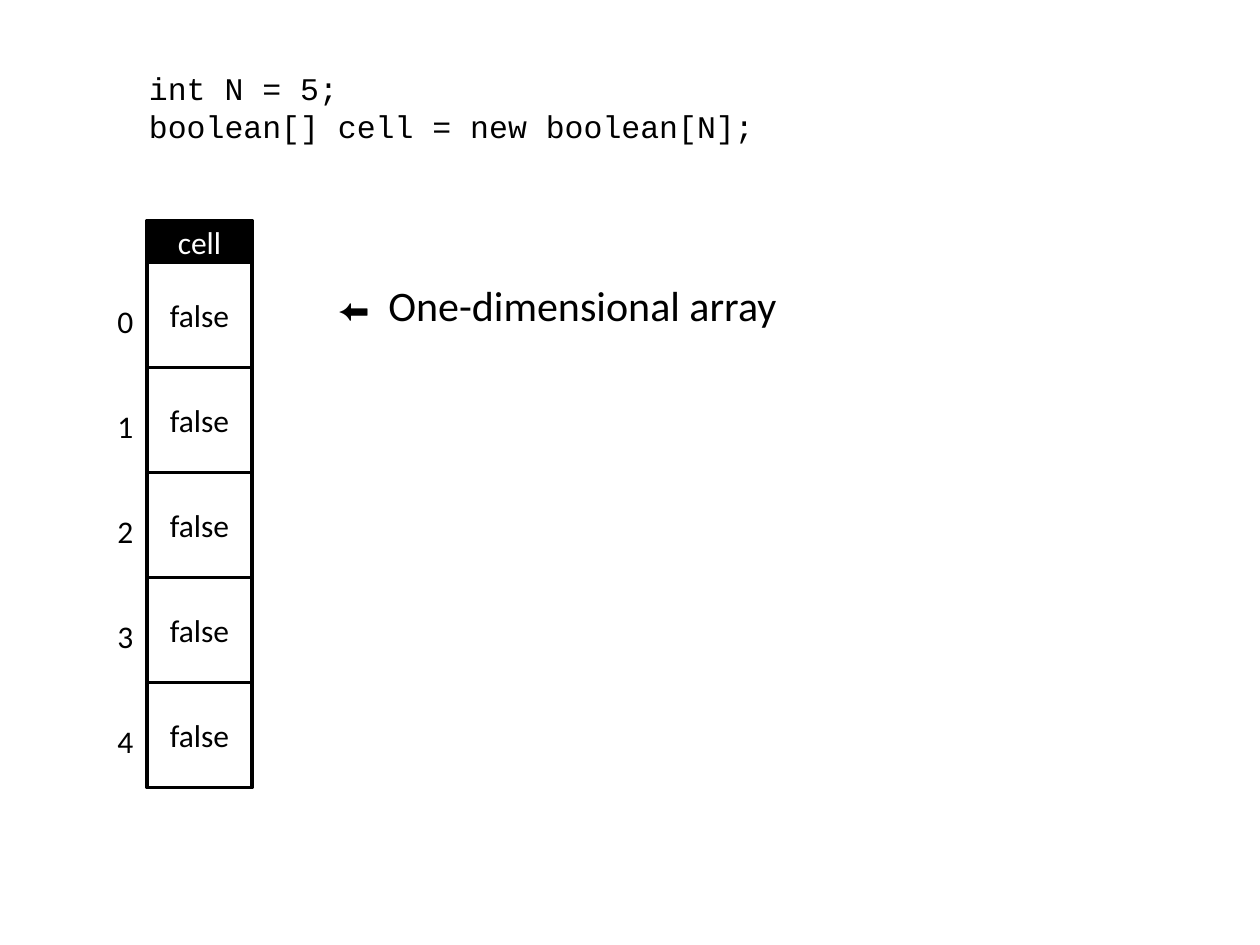
import pptx
import pptx.dml.color
import pptx.enum.shapes
import pptx.enum.text
import pptx.util

PX = 7620  # EMU per px, 120 px to the inch
COLORS = {"ink": "000000", "paper": "FFFFFF"}


def color(name):
    return pptx.dml.color.RGBColor.from_string(COLORS[name])


def add_run(paragraph, text, size=18, font="Calibri", ink="ink", spacing=0):
    run = paragraph.add_run()
    run.text = text
    run.font.size = pptx.util.Pt(size)
    run.font.name = font
    run.font.color.rgb = color(ink)
    if spacing:  # extra letter spacing, in hundredths of a point
        run.font._element.set("spc", str(spacing))


class ArraySlide:
    """Holds the current slide and the style of its elements."""

    line_width = pptx.util.Pt(2)

    def __init__(self, presentation):
        self.slide = presentation.slides.add_slide(presentation.slide_layouts[6])

    def label(self, left, top, width, height, lines):
        """Add a text box; each line is a list of (text, format) pairs."""
        box = self.slide.shapes.add_textbox(
            left * PX, top * PX, width * PX, height * PX)
        frame = box.text_frame
        frame.word_wrap = False
        frame.auto_size = pptx.enum.text.MSO_AUTO_SIZE.SHAPE_TO_FIT_TEXT
        for number, line in enumerate(lines):
            paragraph = frame.add_paragraph() if number else frame.paragraphs[0]
            for text, style in line:
                add_run(paragraph, text, **style)

    def cell(self, left, top, width, height, text, fill="paper", ink="ink"):
        """Add an outlined rectangle with centred text."""
        rectangle = self.slide.shapes.add_shape(
            pptx.enum.shapes.MSO_SHAPE.RECTANGLE,
            left * PX, top * PX, width * PX, height * PX)
        rectangle.shadow.inherit = False
        rectangle.fill.solid()
        rectangle.fill.fore_color.rgb = color(fill)
        rectangle.line.color.rgb = color("ink")
        rectangle.line.width = self.line_width
        frame = rectangle.text_frame
        frame.vertical_anchor = pptx.enum.text.MSO_ANCHOR.MIDDLE
        paragraph = frame.paragraphs[0]
        paragraph.alignment = pptx.enum.text.PP_ALIGN.CENTER
        add_run(paragraph, text, ink=ink)


def main():
    presentation = pptx.Presentation()
    presentation.slide_width = 1200 * PX
    presentation.slide_height = 900 * PX
    page = ArraySlide(presentation)

    # Declaration
    code = {"font": "Courier New"}
    page.label(130, 60, 604, 85, [
        [("int N = 5;", code)],
        [("boolean[] cell = new boolean[N];", code)],
    ])

    # Array: header, then one indexed cell per element
    array_left, header_top, header_height, side = 140, 210, 40, 100
    cells_top = header_top + header_height
    page.cell(array_left, header_top, side, header_height, "cell",
              fill="ink", ink="paper")
    for index in range(5):
        top = cells_top + index * side
        page.cell(array_left, top, side, side, "false")
        page.label(array_left - 40, top + 32, 40, 48, [[(str(index), {})]])

    # Remark; the widened space sets the arrow apart
    page.label(310, 260, 458, 60, [[
        ("⬅", {}),
        (" ", {"size": 24, "spacing": 540}),
        ("One-dimensional array", {"size": 24}),
    ]])

    presentation.save("out.pptx")


if __name__ == "__main__":
    main()
